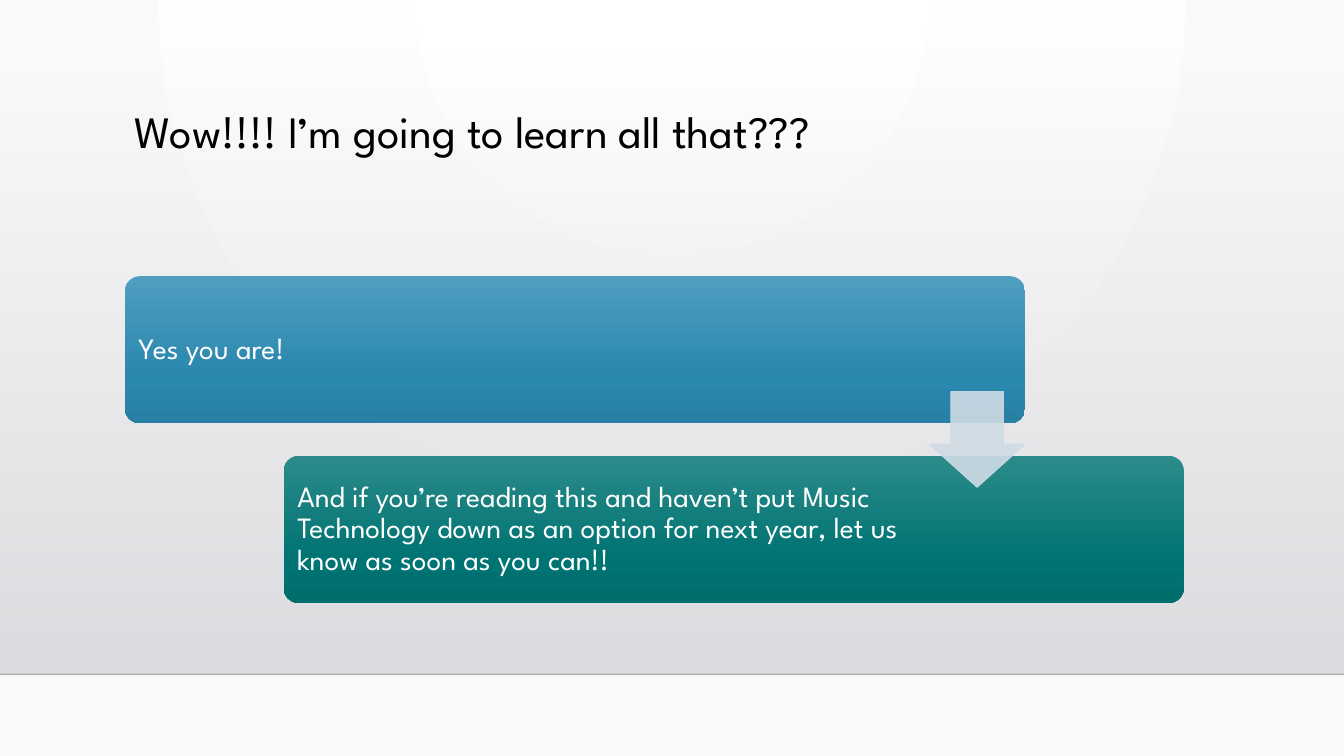
from lxml import etree
from pptx import Presentation
from pptx.dml.color import RGBColor as RGB
from pptx.enum.shapes import MSO_CONNECTOR as CONN, MSO_SHAPE as SHAPE
from pptx.enum.text import MSO_ANCHOR as ANCHOR, PP_ALIGN as ALIGN
from pptx.oxml.ns import qn
from pptx.util import Inches, Pt

W, H = Inches(13.33), Inches(7.5)
FONT = "League Spartan"
BLACK = RGB(0x00, 0x00, 0x00)
WHITE = RGB(0xFF, 0xFF, 0xFF)
PAPER = RGB(0xFA, 0xFA, 0xFA)
MIST_TOP = RGB(0xDC, 0xDC, 0xE0)
MIST_BASE = RGB(0xDE, 0xDE, 0xE2)
FLOOR_LINE = RGB(0x00, 0x00, 0x01)
ARROW = RGB(0xCF, 0xDC, 0xE5)
BLUES = RGB(0x4F, 0x9E, 0xC0), RGB(0x2A, 0x87, 0xAE), RGB(0x28, 0x80, 0xA5)
TEALS = RGB(0x2C, 0x8B, 0x8A), RGB(0x00, 0x74, 0x73), RGB(0x00, 0x6E, 0x6D)
CARD_STOPS = 0, 69, 100

CARDS = [
    ("Yes you are!", BLUES, 0.83),
    ("And if you’re reading this and haven’t put Music Technology down as an "
     "option for next year, let us know as soon as you can!!", TEALS, 0.71),
]


def add(parent, tag, **attrs):
    return etree.SubElement(parent, qn(tag), {k: str(v) for k, v in attrs.items()})


def set_alpha(fill_parent, percent):
    clr = fill_parent.find(qn("a:solidFill")).find(qn("a:srgbClr"))
    add(clr, "a:alpha", val=percent * 1000)


def set_gradient(parent, stops, focus=None):
    solid = parent.find(qn("a:solidFill"))
    grad = etree.Element(qn("a:gradFill"), rotWithShape="1")
    gs_lst = add(grad, "a:gsLst")
    for pos, color, alpha in stops:
        clr = add(add(gs_lst, "a:gs", pos=pos * 1000), "a:srgbClr", val=color)
        if alpha < 100:
            add(clr, "a:alpha", val=alpha * 1000)
    if focus:
        sides = {side: share * 1000 for side, share in zip("ltrb", focus)}
        add(add(grad, "a:path", path="circle"), "a:fillToRect", **sides)
    else:
        add(grad, "a:lin", ang=90 * 60000, scaled=0)
    parent.replace(solid, grad)


def add_block(s, kind, x, y, w, h, color):
    sp = s.shapes.add_shape(kind, int(x), int(y), int(w), int(h))
    sp.shadow.inherit = False
    sp.fill.solid()
    sp.fill.fore_color.rgb = color
    sp.line.fill.background()
    return sp


def add_text(s, box, text, size, color, anchor, inset):
    tf = s.shapes.add_textbox(*map(int, box)).text_frame
    tf.word_wrap = True
    tf.vertical_anchor = anchor
    tf.margin_left = tf.margin_right = inset
    p = tf.paragraphs[0]
    p.alignment = ALIGN.LEFT
    p.line_spacing = 0.9
    r = p.add_run()
    r.text = text
    r.font.name, r.font.size, r.font.color.rgb = FONT, Pt(size), color
    return tf


def draw_backdrop(s, floor):
    s.background.fill.solid()
    bg = s.element.find(".//" + qn("p:bgPr"))
    set_gradient(bg, [(0, WHITE, 100), (100, PAPER, 100)], focus=(43, 0, 43, 100))

    top = H * 0.068
    mist = add_block(s, SHAPE.RECTANGLE, 0, top, W, floor - top, MIST_TOP)
    set_gradient(mist.element.spPr, [(0, MIST_TOP, 0), (100, MIST_BASE, 100)])

    edge = s.shapes.add_connector(CONN.STRAIGHT, 0, int(floor), W, int(floor))
    edge.line.width = Pt(1)
    edge.line.color.rgb = FLOOR_LINE
    spPr = edge.element.spPr
    set_alpha(spPr.find(qn("a:ln")), 20)
    add(spPr, "a:effectLst")


def draw_title(s, x, y, w, h):
    add_text(s, (x, y, w, h), "Wow!!!! I’m going to learn all that???",
             32, BLACK, ANCHOR.TOP, Inches(0.1))


def draw_steps(s, x, y, w, h):
    card_w, card_h = w * 0.85, h * 0.45
    pad = card_h * 0.03
    for i, (text, colors, text_share) in enumerate(CARDS):
        cx, cy = x + i * (w - card_w), y + i * (h - card_h)
        card = add_block(s, SHAPE.ROUNDED_RECTANGLE, cx, cy, card_w, card_h, colors[0])
        card.adjustments[0] = 0.1
        set_gradient(card.element.spPr, [(pos, c, 100) for pos, c in zip(CARD_STOPS, colors)])
        box = cx + pad, cy + pad, card_w * text_share, card_h - 2 * pad
        tf = add_text(s, box, text, 21, WHITE, ANCHOR.MIDDLE, Inches(0.09))
        tf.margin_top = tf.margin_bottom = Inches(0.09)

    side = card_h * 0.65
    arrow = add_block(s, SHAPE.DOWN_ARROW, x + card_w - side, y + (h - side) / 2,
                      side, side, ARROW)
    arrow.adjustments[0], arrow.adjustments[1] = 0.55, 0.45
    arrow.line.color.rgb = ARROW
    arrow.line.width = Pt(0.75)
    spPr = arrow.element.spPr
    for fill_parent in (spPr, spPr.find(qn("a:ln"))):
        set_alpha(fill_parent, 90)


def main():
    prs = Presentation()
    prs.slide_width, prs.slide_height = W, H
    s = prs.slides.add_slide(prs.slide_layouts[6])
    left, width = Inches(1.24), Inches(10.5)
    draw_backdrop(s, Inches(6.69))
    draw_title(s, left, Inches(1.04), width, Inches(1.15))
    draw_steps(s, left, Inches(2.74), width, Inches(3.24))
    prs.save("out.pptx")


if __name__ == "__main__":
    main()
